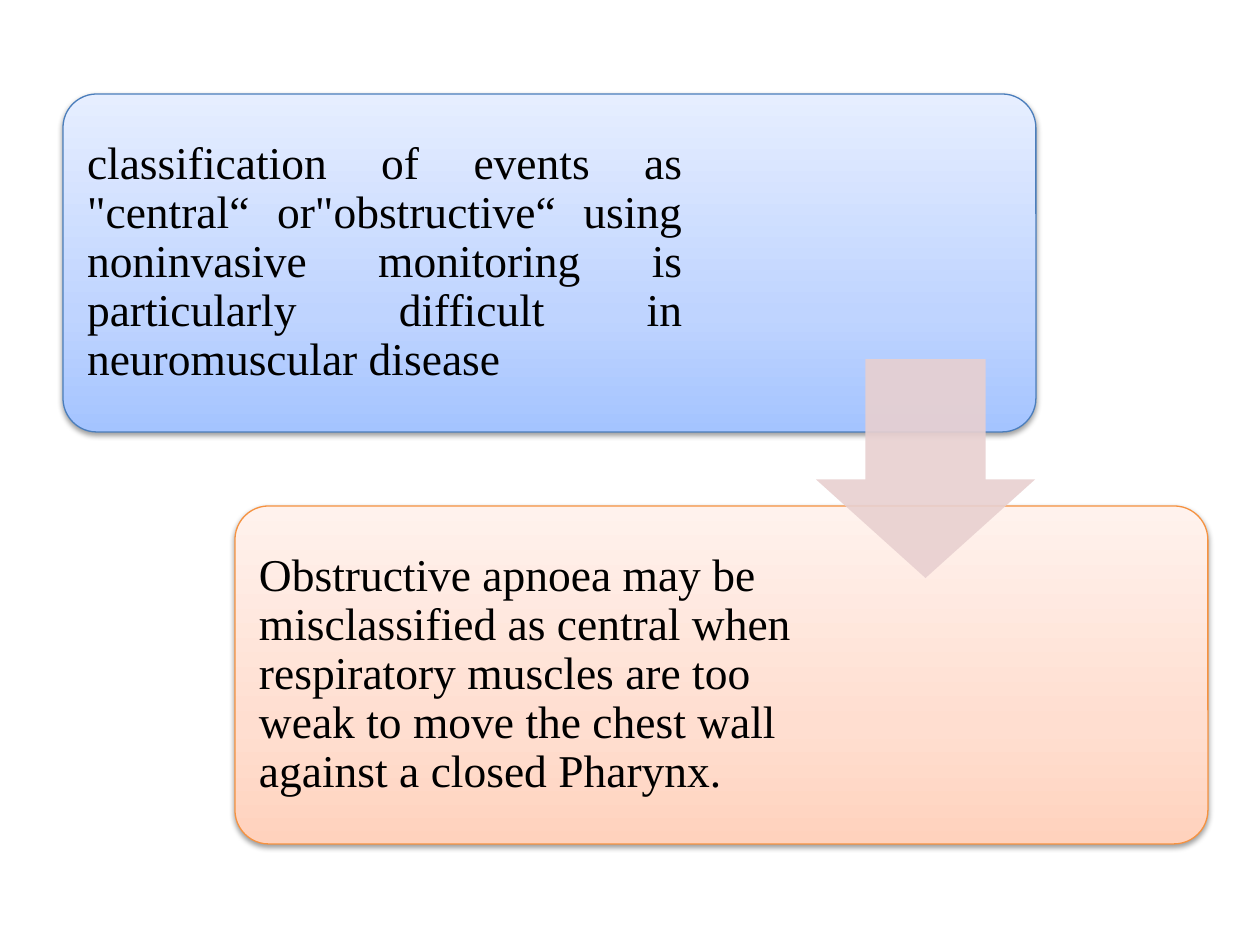
import pptx
import pptx.dml.color
import pptx.enum.shapes
import pptx.enum.text
import pptx.oxml
import pptx.oxml.ns
import pptx.util

PX = 914400 / 126
SLIDE = (1260, 945)
CARD_SIZE = (973, 338)
TEXT_INSET = 10
TEXT_MARGIN = 14
ARROW_BOX = (816, 359, 219, 219)
FONT = "Times New Roman"
STOPS = (0, 35, 100)

COLORS = {
    "text": "000000",
    "arrow": "E8D0D0",
    "shadow": "000000",
    "blue line": "4B7EBC",
    "blue": ("A4C4FF", "BFD4FF", "E6EEFF"),
    "orange line": "F69240",
    "orange": ("FFD2BD", "FFDED0", "FFF2ED"),
}

ALIGN = pptx.enum.text.PP_ALIGN
CARDS = [
    {"at": (63, 94), "color": "blue", "text_width": 624, "align": ALIGN.JUSTIFY,
     "text": 'classification of events as "central“ or"obstructive“ using noninvasive '
             'monitoring is particularly difficult in neuromuscular disease'},
    {"at": (235, 506), "color": "orange", "text_width": 562, "align": ALIGN.LEFT,
     "text": "Obstructive apnoea may be misclassified as central when respiratory "
             "muscles are too weak to move the chest wall against a closed Pharynx."},
]


def emu(*lengths):
    return [round(length * PX) for length in lengths]


def rgb(name):
    return pptx.dml.color.RGBColor.from_string(COLORS[name])


def element(xml):
    """Parse XML whose first tag is not self-closing, adding the a: namespace."""
    return pptx.oxml.parse_xml(xml.replace(">", f" {pptx.oxml.ns.nsdecls('a')}>", 1))


def fill_gradient(shape, colors):
    """Fill upwards, with the first colour at the bottom."""
    shape.fill.gradient()
    stops = "".join(
        f'<a:gs pos="{pos * 1000}"><a:srgbClr val="{color}"/></a:gs>'
        for pos, color in zip(STOPS, colors))
    gradient = shape._element.spPr.find(pptx.oxml.ns.qn("a:gradFill"))
    gradient.getparent().replace(gradient, element(
        f'<a:gradFill rotWithShape="1"><a:gsLst>{stops}</a:gsLst>'
        '<a:lin ang="16200000" scaled="0"/></a:gradFill>'))


def add_shadow(shape):
    shape.shadow.inherit = False
    effects = shape._element.spPr.find(pptx.oxml.ns.qn("a:effectLst"))
    effects.append(element(
        '<a:outerShdw blurRad="40000" dist="20000" dir="5400000" rotWithShape="0">'
        f'<a:srgbClr val="{COLORS["shadow"]}"><a:alpha val="38000"/></a:srgbClr>'
        '</a:outerShdw>'))


def add_card(slide, card):
    left, top = card["at"]
    width, height = CARD_SIZE
    panel = slide.shapes.add_shape(
        pptx.enum.shapes.MSO_SHAPE.ROUNDED_RECTANGLE, *emu(left, top, width, height))
    panel.adjustments[0] = 0.1
    fill_gradient(panel, COLORS[card["color"]])
    panel.line.color.rgb = rgb(card["color"] + " line")
    panel.line.width = pptx.util.Pt(0.75)
    add_shadow(panel)

    statement = slide.shapes.add_textbox(*emu(
        left + TEXT_INSET, top + TEXT_INSET, card["text_width"], height - 2 * TEXT_INSET))
    frame = statement.text_frame
    frame.word_wrap = True
    frame.vertical_anchor = pptx.enum.text.MSO_ANCHOR.MIDDLE
    for side in ("left", "top", "right", "bottom"):
        setattr(frame, f"margin_{side}", emu(TEXT_MARGIN)[0])
    paragraph = frame.paragraphs[0]
    paragraph.alignment = card["align"]
    paragraph.line_spacing = 0.9
    run = paragraph.add_run()
    run.text = card["text"]
    run.font.name = FONT
    run.font.size = pptx.util.Pt(26)
    run.font.color.rgb = rgb("text")


def add_arrow(slide):
    arrow = slide.shapes.add_shape(
        pptx.enum.shapes.MSO_SHAPE.DOWN_ARROW, *emu(*ARROW_BOX))
    arrow.adjustments[0] = 0.55
    arrow.adjustments[1] = 0.45
    arrow.shadow.inherit = False
    arrow.line.fill.background()
    arrow.fill.solid()
    arrow.fill.fore_color.rgb = rgb("arrow")
    color = arrow._element.spPr.find(".//" + pptx.oxml.ns.qn("a:srgbClr"))
    color.append(element('<a:alpha val="90000"></a:alpha>'))


def main():
    deck = pptx.Presentation()
    deck.slide_width, deck.slide_height = emu(*SLIDE)
    slide = deck.slides.add_slide(deck.slide_layouts.get_by_name("Blank"))
    for card in CARDS:
        add_card(slide, card)
    add_arrow(slide)
    deck.save("out.pptx")


if __name__ == "__main__":
    main()
